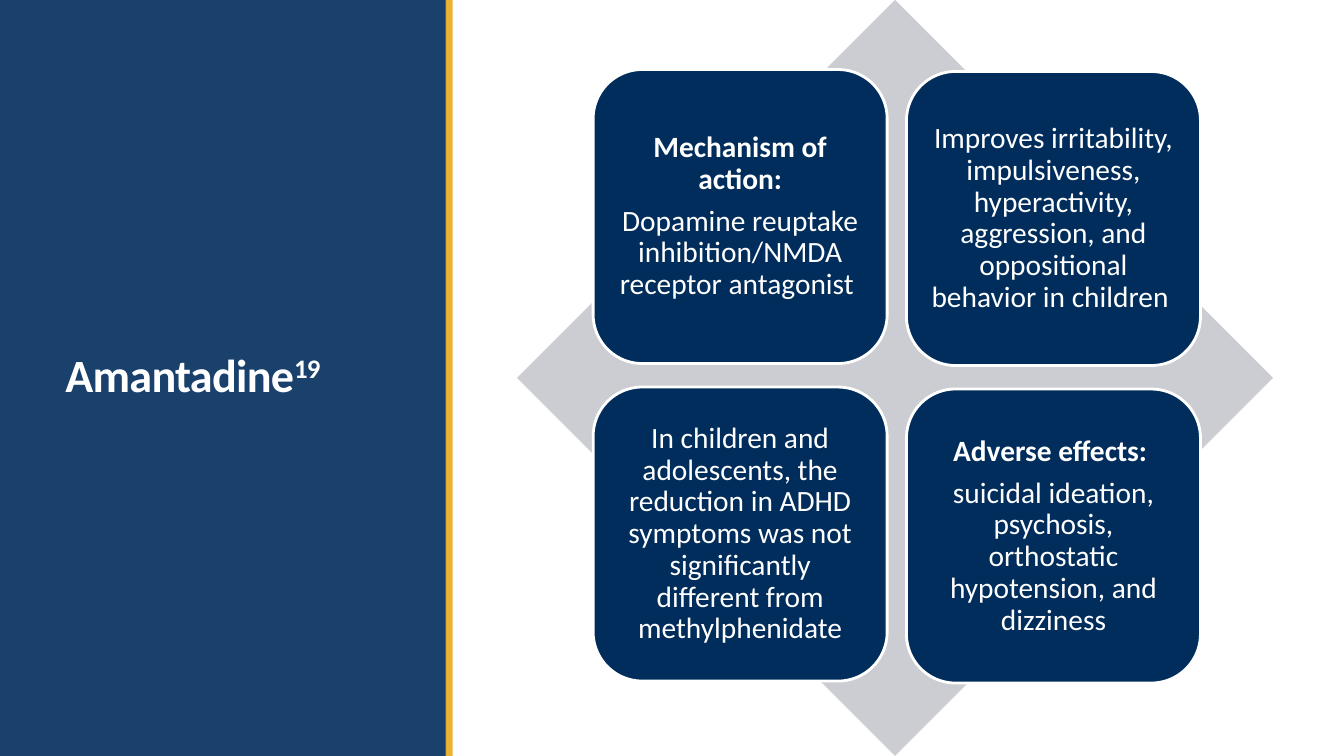
"""Build the Amantadine slide: a title panel beside four cards on a diamond."""
from dataclasses import dataclass

from lxml import etree
from pptx import Presentation
from pptx import util as u
from pptx.dml.color import RGBColor
from pptx.enum import shapes, text
from pptx.oxml.ns import qn

COLUMNS, ROWS = 160, 90
UNIT = u.Inches(7.5) / ROWS

NAVY = RGBColor(0x00, 0x2D, 0x5B)
GOLD = RGBColor(0xE9, 0xAA, 0x21)
GREY = RGBColor(0xCC, 0xCD, 0xD2)
WHITE = RGBColor(0xFF, 0xFF, 0xFF)

FONT = "Calibri"
CARD_SIZE = 35
CARD_LEFT, CARD_TOP = 70.62, 8.28
COLUMN_PITCH, ROW_PITCH = 37.3, 37.8
RIGHT_COLUMN_DROP = 0.24


@dataclass(frozen=True)
class Box:
    """Position and size in grid columns and rows."""

    left: float
    top: float
    width: float
    height: float

    def lengths(self) -> tuple:
        """Return the box in slide units."""
        return tuple(
            u.Emu(round(cells * UNIT))
            for cells in (self.left, self.top, self.width, self.height)
        )


@dataclass(frozen=True)
class Card:
    """A rounded card with an optional bold heading."""

    column: int
    row: int
    body: str
    heading: str = ""

    def box(self) -> Box:
        """Return the card's place on the grid."""
        return Box(
            CARD_LEFT + self.column * COLUMN_PITCH,
            CARD_TOP + self.row * ROW_PITCH + self.column * RIGHT_COLUMN_DROP,
            CARD_SIZE,
            CARD_SIZE,
        )


CARDS = (
    Card(0, 0, "Dopamine reuptake inhibition/NMDA receptor antagonist ",
         "Mechanism of action:"),
    Card(1, 0, "Improves irritability, impulsiveness, hyperactivity, aggression, "
               "and oppositional behavior in children "),
    Card(0, 1, "In children and adolescents, the reduction in ADHD symptoms was "
               "not significantly different from methylphenidate"),
    Card(1, 1, "suicidal ideation, psychosis, orthostatic hypotension, and dizziness",
         "Adverse effects: "),
)


def add_filled(slide, kind, box: Box, colour: RGBColor, opacity: int = 100):
    """Add a borderless preset shape with a solid fill."""
    shape = slide.shapes.add_shape(kind, *box.lengths())
    shape.shadow.inherit = False
    shape.fill.solid()
    shape.fill.fore_color.rgb = colour
    shape.line.fill.background()
    if opacity < 100:
        colour_element = next(shape.fill._xPr.iter(qn("a:srgbClr")))
        etree.SubElement(colour_element, qn("a:alpha"), val=str(opacity * 1000))
    return shape


def style_font(font, size: float, bold: bool) -> None:
    """Apply the slide's typeface in white."""
    font.name = FONT
    font.size = u.Pt(size)
    font.bold = bold
    font.color.rgb = WHITE


def add_title(slide, box: Box, title: str, reference: str) -> None:
    """Add the title with a raised reference number."""
    frame = slide.shapes.add_textbox(*box.lengths()).text_frame
    frame.word_wrap = True
    frame.vertical_anchor = text.MSO_ANCHOR.MIDDLE
    paragraph = frame.paragraphs[0]
    paragraph.line_spacing = 0.85
    for wording, baseline in ((title, 0), (reference, 30)):
        run = paragraph.add_run()
        run.text = wording
        style_font(run.font, 33, True)
        properties = run._r.get_or_add_rPr()
        properties.set("spc", "-50")
        properties.set("baseline", str(baseline * 1000))


def add_card(slide, card: Card) -> None:
    """Add one card with its text inside."""
    shape = add_filled(
        slide, shapes.MSO_SHAPE.ROUNDED_RECTANGLE, card.box(), NAVY)
    shape.line.color.rgb = WHITE
    shape.line.width = u.Pt(2)
    frame = shape.text_frame
    frame.word_wrap = True
    frame.vertical_anchor = text.MSO_ANCHOR.MIDDLE
    frame.margin_left = frame.margin_right = u.Inches(0.09)
    frame.margin_top = frame.margin_bottom = u.Inches(0.09)
    frame.text = "\n".join(filter(None, (card.heading, card.body)))
    for index, paragraph in enumerate(frame.paragraphs):
        paragraph.alignment = text.PP_ALIGN.CENTER
        paragraph.line_spacing = 0.9
        paragraph.space_after = u.Pt(7.35)
        style_font(paragraph.runs[0].font, 21, bool(card.heading) and index == 0)


def main() -> None:
    """Build and save the presentation."""
    presentation = Presentation()
    presentation.slide_width = u.Emu(round(COLUMNS * UNIT))
    presentation.slide_height = u.Emu(round(ROWS * UNIT))
    slide = presentation.slides.add_slide(presentation.slide_layouts[6])
    rectangle = shapes.MSO_SHAPE.RECTANGLE
    add_filled(slide, rectangle, Box(0, 0, 53.15, ROWS), NAVY, 90)
    add_filled(slide, rectangle, Box(53.05, 0, 0.84, ROWS), GOLD, 90)
    add_title(slide, Box(6.6, 30, 42, 30), "Amantadine", "19")
    add_filled(slide, shapes.MSO_SHAPE.DIAMOND, Box(61.55, 0, ROWS, ROWS), GREY)
    for card in CARDS:
        add_card(slide, card)
    presentation.save("out.pptx")


if __name__ == "__main__":
    main()
